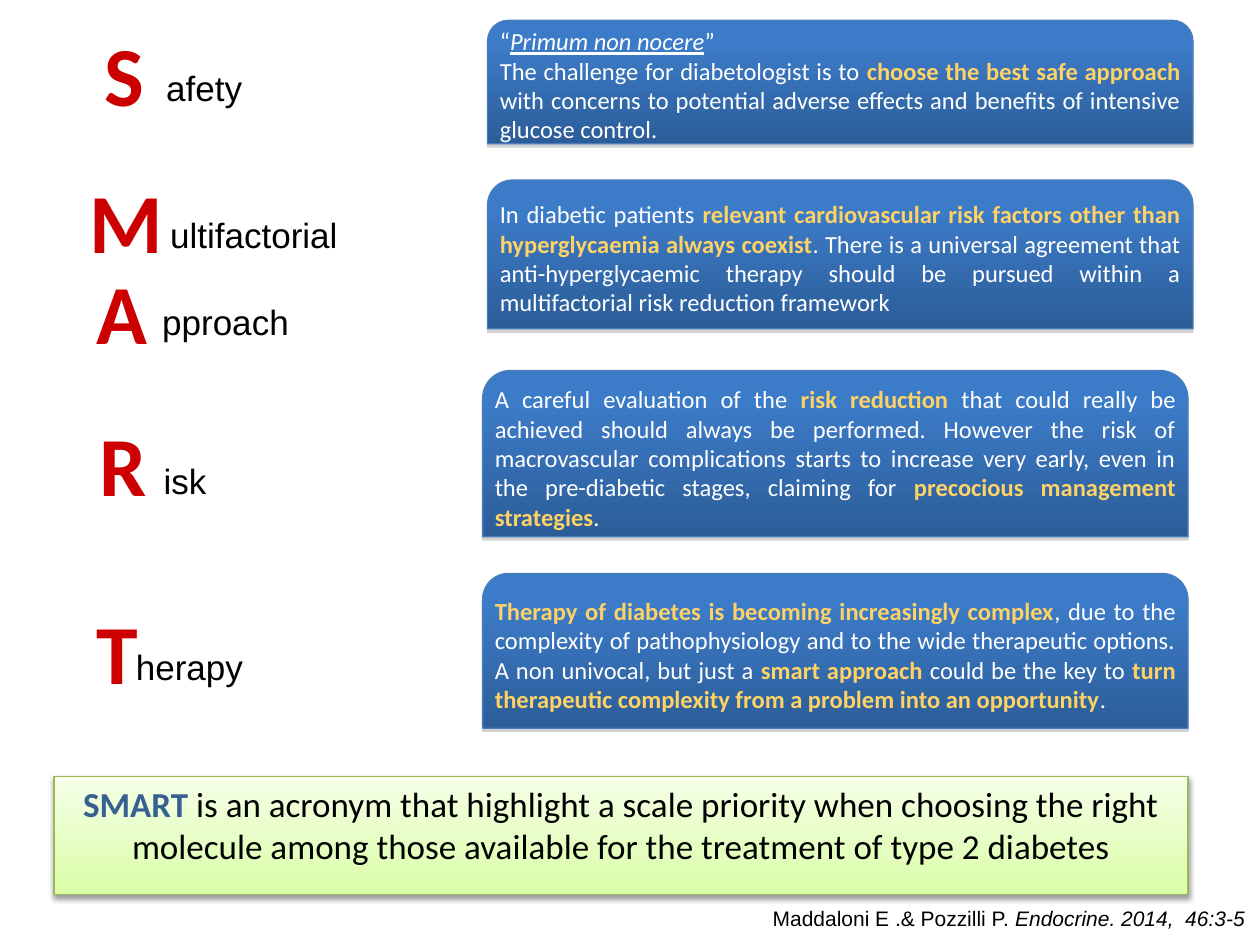
from lxml import etree
from pptx import Presentation
from pptx.dml.color import RGBColor as RGB
from pptx.enum.shapes import MSO_SHAPE as SHAPE
from pptx.enum.text import MSO_ANCHOR as ANCHOR, PP_ALIGN as ALIGN
from pptx.oxml.ns import qn
from pptx.util import Cm, Pt

THEME = {
    "red": "CC0000", "black": "000000", "white": "FFFFFF", "gold": "FFD266", "navy": "376092",
    "blue_fill": ("3C7BC7", "2C5D98"), "blue_line": "4A7EBB",
    "green_fill": ("DAFDA7", "F5FFE7"), "green_line": "98B955",
    "initial": 48, "word": 20, "box": 14, "summary": 20, "citation": 12,
    "head_font": "Calibri", "body_font": "Arial",
}


def add_text(p, runs, size, font, align):
    p.alignment = align
    p.font.size = Pt(THEME[size])
    p.font.name = THEME[font]
    for text, color, style in runs:
        r = p.add_run()
        r.text = text
        r.font.color.rgb = RGB.from_string(THEME[color])
        if "b" in style:
            r.font.bold = True
        if "i" in style:
            r.font.italic = True
        if "u" in style:
            r.font.underline = True


def add_panel(shape, left, top, width, height, palette, angle, start, shadow):
    sp = s.shapes.add_shape(shape, Cm(left), Cm(top), Cm(width), Cm(height))
    sp.fill.gradient()
    sp.fill.gradient_angle = angle
    for stop, color, position in zip(sp.fill.gradient_stops, THEME[palette + "_fill"], (start, 1)):
        stop.color.rgb = RGB.from_string(color)
        stop.position = position
    sp.line.color.rgb = RGB.from_string(THEME[palette + "_line"])
    sp.line.width = Pt(0.75)
    sp.shadow.inherit = False
    color, alpha, blur, distance = shadow
    effects = sp._element.spPr.find(qn("a:effectLst"))
    outer = etree.SubElement(effects, qn("a:outerShdw"), blurRad=str(Pt(blur)),
                             dist=str(Pt(distance)), dir="5400000", rotWithShape="0")
    clr = etree.SubElement(outer, qn("a:srgbClr"), val=color)
    etree.SubElement(clr, qn("a:alpha"), val=str(alpha * 1000))
    sp.text_frame.word_wrap = True
    return sp


prs = Presentation()
prs.slide_width, prs.slide_height = Cm(25.4), Cm(19.05)
s = prs.slides.add_slide(prs.slide_layouts[6])

labels = [
    ("S", 1.85, 0.33, 1.32, "initial"), ("afety", 3.1, 1.22, 2.06, "word"),
    ("M", 1.55, 3.3, 2.01, "initial"), ("ultifactorial", 3.18, 4.17, 3.91, "word"),
    ("A", 1.68, 5.13, 1.55, "initial"), ("pproach", 3.02, 5.94, 3.1, "word"),
    ("R", 1.75, 8.2, 1.47, "initial"), ("isk", 3.05, 9.14, 1.37, "word"),
    ("T", 1.68, 11.99, 1.37, "initial"), ("herapy", 2.49, 12.88, 2.69, "word"),
]
for text, left, top, width, role in labels:
    height = 2.31 if role == "initial" else 1.12
    tf = s.shapes.add_textbox(Cm(left), Cm(top), Cm(width), Cm(height)).text_frame
    tf.word_wrap = False
    if role == "initial":
        add_text(tf.paragraphs[0], [(text, "red", "b")], role, "head_font", ALIGN.CENTER)
    else:
        add_text(tf.paragraphs[0], [(text, "black", "")], role, "body_font", ALIGN.LEFT)

boxes = [
    (9.83, 0.41, 2.49, [
        [("“", "white", ""), ("Primum non nocere", "white", "iu"), ("”", "white", "")],
        [("The challenge for diabetologist is to ", "white", ""),
         ("choose the best safe approach ", "gold", "b"),
         ("with concerns to potential adverse effects and benefits of intensive glucose control.",
          "white", "")]]),
    (9.83, 3.63, 3, [
        [("In diabetic patients ", "white", ""),
         ("relevant cardiovascular risk factors other than hyperglycaemia always coexist",
          "gold", "b"),
         (". There is a universal agreement that anti-hyperglycaemic therapy should be pursued "
          "within a multifactorial risk reduction framework", "white", "")]]),
    (9.73, 7.47, 3.35, [
        [("A careful evaluation of the ", "white", ""), ("risk reduction", "gold", "b"),
         (" that could really be achieved should always be performed. However the risk of "
          "macrovascular complications starts to increase very early, even in the pre-diabetic "
          "stages, claiming for ", "white", ""),
         ("precocious management strategies", "gold", "b"), (".", "white", "")]]),
    (9.73, 11.56, 3.12, [
        [("Therapy of diabetes is becoming increasingly complex", "gold", "b"),
         (", due to the complexity of pathophysiology and to the wide therapeutic options. "
          "A non univocal, but just a ", "white", ""),
         ("smart approach ", "gold", "b"), ("could be the key to ", "white", ""),
         ("turn therapeutic complexity from a problem into an opportunity", "gold", "b"),
         (".", "white", "")]]),
]
for left, top, height, paragraphs in boxes:
    sp = add_panel(SHAPE.ROUND_2_SAME_RECTANGLE, left, top, 14.22, height, "blue", 270, 0.2,
                   ("808080", 35, 0, 1.8))
    tf = sp.text_frame
    tf.vertical_anchor = ANCHOR.MIDDLE
    corner_inset = 0.05 * height
    tf.margin_left = tf.margin_right = Cm(0.25 - corner_inset)
    tf.margin_top = tf.margin_bottom = 0
    for i, runs in enumerate(paragraphs):
        p = tf.add_paragraph() if i else tf.paragraphs[0]
        add_text(p, runs, "box", "head_font", ALIGN.JUSTIFY)

tf = s.shapes.add_textbox(Cm(13.74), Cm(18.14), Cm(11.61), Cm(0.76)).text_frame
tf.word_wrap = True
add_text(tf.paragraphs[0], [("Maddaloni E .& Pozzilli P. ", "black", ""),
                            ("Endocrine. 2014,  46:3-5", "black", "i")],
         "citation", "body_font", ALIGN.RIGHT)

sp = add_panel(SHAPE.RECTANGLE, 1.09, 15.65, 22.86, 2.39, "green", 90, 0,
               ("000000", 38, 3.1, 1.6))
tf = sp.text_frame
tf.vertical_anchor = ANCHOR.TOP
p = tf.paragraphs[0]
p.space_before = Pt(4)
add_text(p, [("SMART ", "navy", "b"),
             ("is an acronym that highlight a scale priority when choosing the right molecule "
              "among those available for the treatment of type 2 diabetes", "black", "")],
         "summary", "head_font", ALIGN.CENTER)

prs.save("out.pptx")
